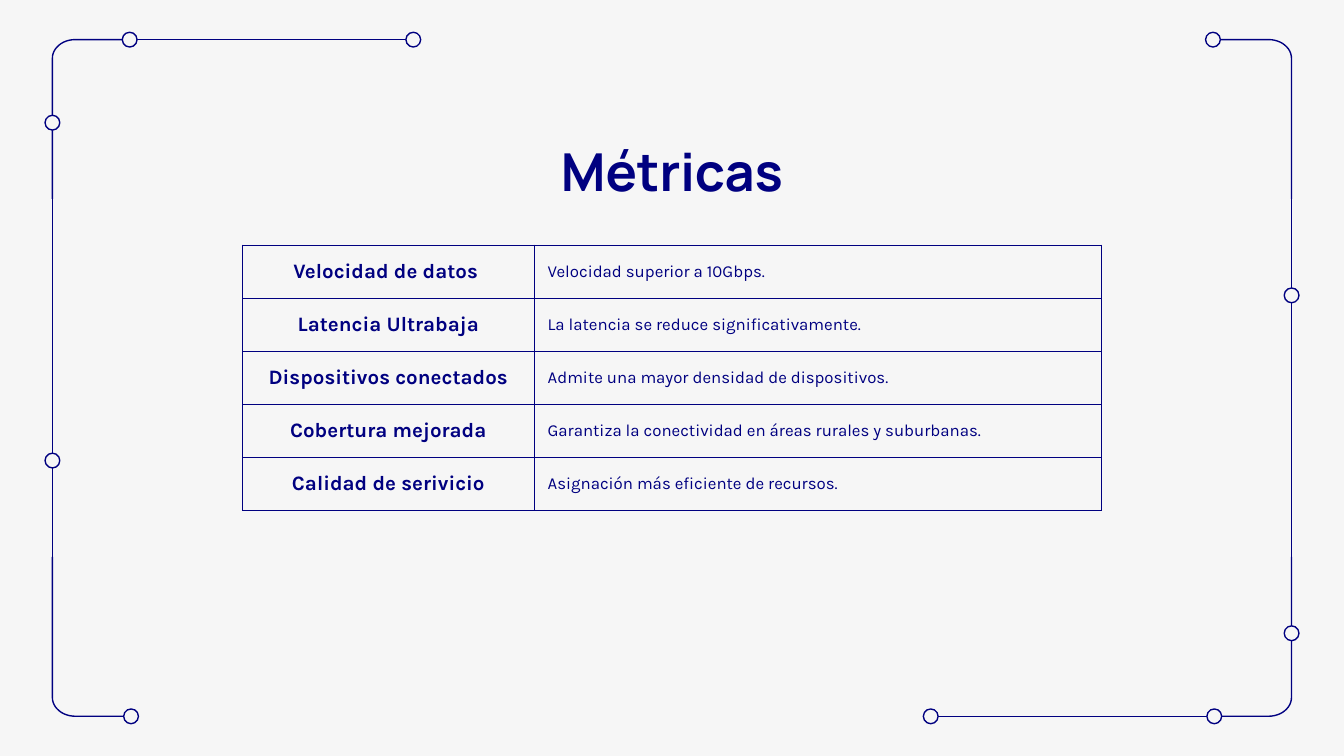
import math

import lxml.etree
import pptx
import pptx.dml.color
import pptx.enum.shapes
import pptx.enum.text
import pptx.oxml
import pptx.oxml.ns
import pptx.util

COLUMNS, ROWS = 100, 56.25
NAVY, PAPER = "000080", "F6F6F6"
HEADING_FONT, BODY_FONT = "Manrope", "Karla"
CENTER = pptx.enum.text.PP_ALIGN.CENTER
LEFT = pptx.enum.text.PP_ALIGN.LEFT

METRICS = [
    ("Velocidad de datos ", "Velocidad superior a 10Gbps."),
    ("Latencia Ultrabaja", "La latencia se reduce significativamente."),
    ("Dispositivos conectados", "Admite una mayor densidad de dispositivos."),
    ("Cobertura mejorada", "Garantiza la conectividad en áreas rurales y suburbanas."),
    ("Calidad de serivicio", "Asignación más eficiente de recursos."),
]

FRAME_LEFT, FRAME_TOP = 3.9, 2.95
NODES = [(9.65, FRAME_TOP), (30.75, FRAME_TOP), (FRAME_LEFT, 9.13),
         (FRAME_LEFT, 34.27), (9.75, ROWS - FRAME_TOP)]
TRACKS = [((10.2, FRAME_TOP), (30.2, FRAME_TOP)),
          ((FRAME_LEFT, 14.3), (FRAME_LEFT, 41.5))]


def grid(count):
    return pptx.util.Inches(count / 10)


def color(hex_string):
    return pptx.dml.color.RGBColor.from_string(hex_string)


def write(frame, text, font=BODY_FONT, size=9, bold=False, align=LEFT, ink=NAVY):
    paragraph = frame.paragraphs[0]
    paragraph.alignment = align
    run = paragraph.add_run()
    run.text = text
    run.font.name = font
    run.font.size = pptx.util.Pt(size)
    run.font.bold = bold
    run.font.color.rgb = color(ink)


def opposite(point):
    return COLUMNS - point[0], ROWS - point[1]


def corner_points():
    radius_x, radius_y, steps = 1.7, 1.4, 12
    arc = []
    for step in range(steps + 1):
        angle = math.pi / 2 * step / steps
        arc.append((FRAME_LEFT + radius_x * (1 - math.cos(angle)),
                    FRAME_TOP + radius_y * (1 - math.sin(angle))))
    return [(FRAME_LEFT, 14.8), *arc, (9.2, FRAME_TOP)]


class Canvas:
    def __init__(self, slide, ink=NAVY, paper=PAPER, weight=0.75):
        self.slide = slide
        self.ink = ink
        self.paper = paper
        self.weight = pptx.util.Pt(weight)
        slide.background.fill.solid()
        slide.background.fill.fore_color.rgb = color(paper)

    def outline(self, shape):
        shape.line.color.rgb = color(self.ink)
        shape.line.width = self.weight

    def line(self, start, end):
        connector = self.slide.shapes.add_connector(
            pptx.enum.shapes.MSO_CONNECTOR.STRAIGHT, *map(grid, (*start, *end)))
        self.outline(connector)
        lxml.etree.SubElement(connector._element.spPr, pptx.oxml.ns.qn("a:effectLst"))

    def curve(self, points):
        scaled = [(grid(x), grid(y)) for x, y in points]
        builder = self.slide.shapes.build_freeform(*scaled[0])
        builder.add_line_segments(scaled[1:], close=False)
        shape = builder.convert_to_shape()
        shape.shadow.inherit = False
        shape.fill.background()
        self.outline(shape)

    def node(self, center, diameter=1.1):
        left, top = (position - diameter / 2 for position in center)
        shape = self.slide.shapes.add_shape(
            pptx.enum.shapes.MSO_SHAPE.OVAL,
            *map(grid, (left, top, diameter, diameter)))
        shape.shadow.inherit = False
        shape.fill.solid()
        shape.fill.fore_color.rgb = color(self.paper)
        self.outline(shape)

    def title(self, text, left, top, width, height):
        box = self.slide.shapes.add_textbox(*map(grid, (left, top, width, height)))
        frame = box.text_frame
        frame.word_wrap = True
        frame.margin_left = frame.margin_right = grid(1)
        frame.margin_top = frame.margin_bottom = grid(1)
        write(frame, text, font=HEADING_FONT, size=28, bold=True, align=CENTER)

    def border(self, cell):
        properties = cell._tc.get_or_add_tcPr()
        for index, side in enumerate(("lnL", "lnR", "lnT", "lnB")):
            properties.insert(index, pptx.oxml.parse_xml(
                f'<a:{side} {pptx.oxml.ns.nsdecls("a")} w="{self.weight}">'
                f'<a:solidFill><a:srgbClr val="{self.ink}"/></a:solidFill></a:{side}>'))

    def table(self, records, left, top, widths, row_height):
        table = self.slide.shapes.add_table(
            len(records), len(widths),
            *map(grid, (left, top, sum(widths), row_height * len(records)))).table
        table.first_row = table.horz_banding = False
        for column, width in zip(table.columns, widths):
            column.width = grid(width)
        formats = [dict(size=11, bold=True, align=CENTER), dict(size=9)]
        for row, record in zip(table.rows, records):
            row.height = grid(row_height)
            for cell, text, style in zip(row.cells, record, formats):
                cell.fill.background()
                cell.vertical_anchor = pptx.enum.text.MSO_ANCHOR.MIDDLE
                cell.margin_left = cell.margin_right = grid(1)
                cell.margin_top = cell.margin_bottom = 0
                write(cell.text_frame, text, **style)
                self.border(cell)

    def circuit_frame(self):
        top_corner = corner_points()
        bottom_corner = [(x, ROWS - y) for x, y in top_corner]
        for place in (tuple, opposite):
            for start, end in TRACKS:
                self.line(place(start), place(end))
            for corner in (top_corner, bottom_corner):
                self.curve([place(point) for point in corner])
            for center in NODES:
                self.node(place(center))


def main():
    presentation = pptx.Presentation()
    presentation.slide_width = grid(COLUMNS)
    presentation.slide_height = grid(ROWS)
    canvas = Canvas(presentation.slides.add_slide(presentation.slide_layouts[6]))
    canvas.circuit_frame()
    canvas.title("Métricas", 7.85, 9.35, 84.3, 5.2)
    canvas.table(METRICS, 18.05, 18.25, (21.7, 42.2), 3.95)
    presentation.save("out.pptx")


if __name__ == "__main__":
    main()
